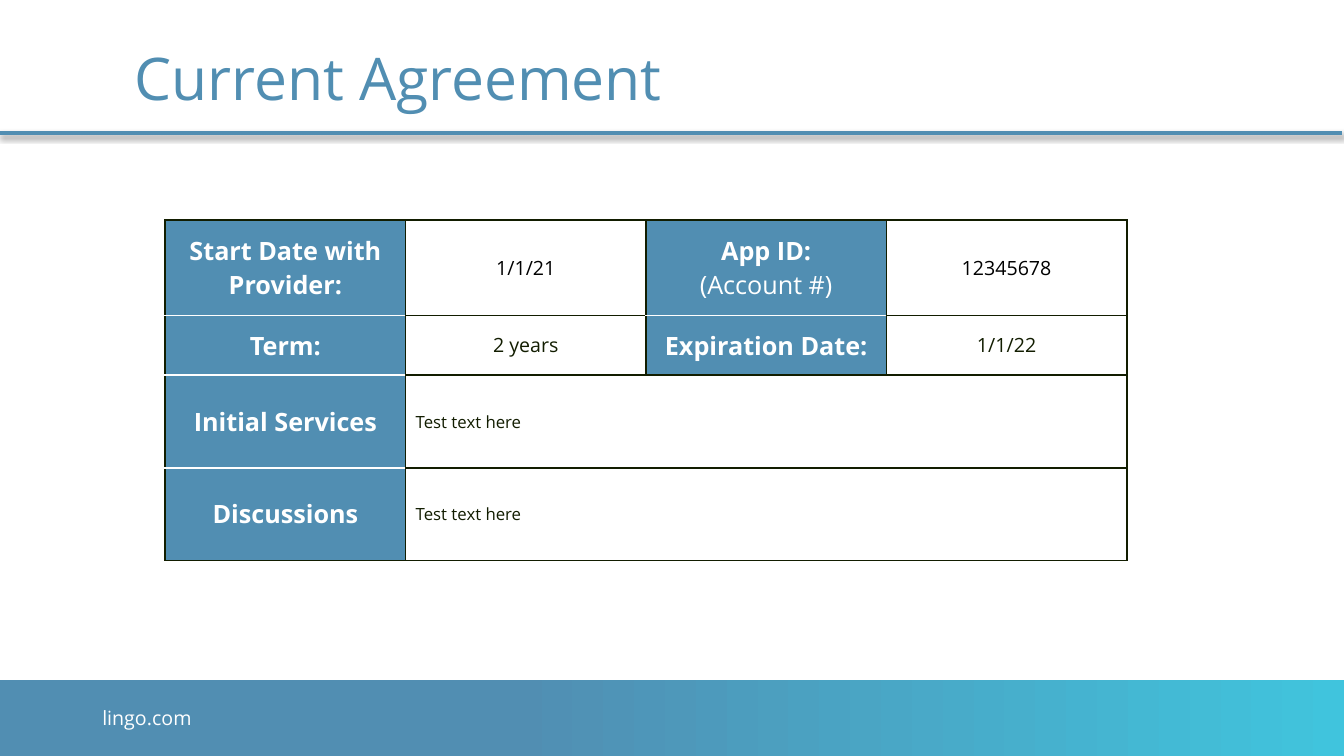
from lxml.etree import SubElement
from pptx import Presentation
from pptx.dml.color import RGBColor
from pptx.enum.shapes import MSO_CONNECTOR, MSO_SHAPE
from pptx.enum.text import MSO_ANCHOR, PP_ALIGN
from pptx.oxml.ns import qn
from pptx.util import Pt

BLUE = RGBColor(0x51, 0x8E, 0xB2)
TURQUOISE = RGBColor(0x40, 0xC4, 0xDD)
DARK = RGBColor(0x12, 0x1D, 0x00)
BLACK = RGBColor(0, 0, 0)
WHITE = RGBColor(255, 255, 255)

COLUMN_WIDTH = 171.75
ROW_HEIGHTS = [68.4, 42.5, 66.25, 66.25]
AGREEMENT = [
    ["Start Date with Provider:", "1/1/21", "App ID:\n(Account #)", "12345678"],
    ["Term:", "2 years", "Expiration Date:", "1/1/22"],
    ["Initial Services", "Test text here"],
    ["Discussions", "Test text here"],
]


class SlideBuilder:
    font_name = "Open Sans"
    border_width = 1.2

    def __init__(self, slide):
        self.slide = slide

    def format_paragraph(self, paragraph, size, color, bold=False, align=PP_ALIGN.LEFT):
        paragraph.alignment = align
        for run in paragraph.runs:
            run.font.name = self.font_name
            run.font.size = Pt(size)
            run.font.bold = bold
            run.font.color.rgb = color

    def text(self, left, top, width, height, text, size, color,
             anchor=MSO_ANCHOR.TOP, line_spacing=None):
        box = self.slide.shapes.add_textbox(Pt(left), Pt(top), Pt(width), Pt(height))
        frame = box.text_frame
        frame.word_wrap = True
        frame.vertical_anchor = anchor
        frame.text = text
        paragraph = frame.paragraphs[0]
        paragraph.line_spacing = line_spacing
        self.format_paragraph(paragraph, size, color)

    def gradient_band(self, left, top, width, height, stops):
        shape = self.slide.shapes.add_shape(
            MSO_SHAPE.RECTANGLE, Pt(left), Pt(top), Pt(width), Pt(height))
        shape.shadow.inherit = False
        shape.line.fill.background()
        shape.fill.gradient()
        shape.fill.gradient_angle = 0
        for stop, (position, color) in zip(shape.fill.gradient_stops, stops):
            stop.position = position
            stop.color.rgb = color

    def shadowed_rule(self, left, right, top, color, width):
        connector = self.slide.shapes.add_connector(
            MSO_CONNECTOR.STRAIGHT, Pt(left), Pt(top), Pt(right), Pt(top))
        connector.line.color.rgb = color
        connector.line.width = Pt(width)
        effects = SubElement(connector._element.spPr, qn("a:effectLst"))
        shadow = SubElement(effects, qn("a:outerShdw"), blurRad=str(Pt(4)),
                            dist=str(Pt(3)), dir=str(45 * 60000), rotWithShape="0")
        shadow_color = SubElement(shadow, qn("a:srgbClr"), val=str(BLACK))
        SubElement(shadow_color, qn("a:alpha"), val="40000")

    def borders(self, cell, top, bottom):
        properties = cell._tc.get_or_add_tcPr()
        for side, color in zip("LRTB", (DARK, DARK, top, bottom)):
            line = SubElement(properties, qn(f"a:ln{side}"), w=str(Pt(self.border_width)))
            fill = SubElement(line, qn("a:solidFill"))
            SubElement(fill, qn("a:srgbClr"), val=str(color))

    def label_cell(self, cell, text):
        cell.text = text
        for index, paragraph in enumerate(cell.text_frame.paragraphs):
            self.format_paragraph(paragraph, 18, WHITE, index == 0, PP_ALIGN.CENTER)

    def value_cell(self, cell, text, color):
        cell.text = text
        size, align = (12, PP_ALIGN.LEFT) if cell.is_merge_origin else (14, PP_ALIGN.CENTER)
        self.format_paragraph(cell.text_frame.paragraphs[0], size, color, align=align)

    def agreement_table(self, left, top, column_width, row_heights, rows):
        column_count = len(rows[0])
        table = self.slide.shapes.add_table(
            len(rows), column_count, Pt(left), Pt(top),
            Pt(column_width * column_count), Pt(sum(row_heights))).table
        for column in table.columns:
            column.width = Pt(column_width)
        for row_index, texts in enumerate(rows):
            table.rows[row_index].height = Pt(row_heights[row_index])
            if len(texts) < column_count:
                table.cell(row_index, 1).merge(table.cell(row_index, column_count - 1))
            for column_index in range(column_count):
                cell = table.cell(row_index, column_index)
                is_label = column_index % 2 == 0 and column_index < len(texts)
                label_rows = [index for index, row in enumerate(rows) if column_index < len(row)]
                top_color = WHITE if is_label and row_index > 0 else DARK
                bottom_color = WHITE if is_label and row_index < label_rows[-1] else DARK
                self.borders(cell, top_color, bottom_color)
                cell.fill.solid()
                cell.fill.fore_color.rgb = BLUE if is_label else WHITE
                cell.vertical_anchor = MSO_ANCHOR.MIDDLE
                if is_label:
                    self.label_cell(cell, texts[column_index])
                elif column_index < len(texts):
                    self.value_cell(cell, texts[column_index], DARK if row_index else BLACK)


def main():
    presentation = Presentation()
    presentation.slide_width = Pt(960)
    presentation.slide_height = Pt(540)
    builder = SlideBuilder(presentation.slides.add_slide(presentation.slide_layouts[6]))
    builder.gradient_band(0, 486, 960, 54, [(0.38, BLUE), (1, TURQUOISE)])
    builder.shadowed_rule(-2, 958.5, 95, BLUE, 2.25)
    builder.text(66, 500.5, 181.5, 29, "lingo.com", 14, WHITE)
    builder.text(88.75, 23.75, 816.5, 69, "Current Agreement", 42, BLUE, MSO_ANCHOR.MIDDLE, 0.9)
    builder.agreement_table(118, 157, COLUMN_WIDTH, ROW_HEIGHTS, AGREEMENT)
    presentation.save("out.pptx")


if __name__ == "__main__":
    main()
